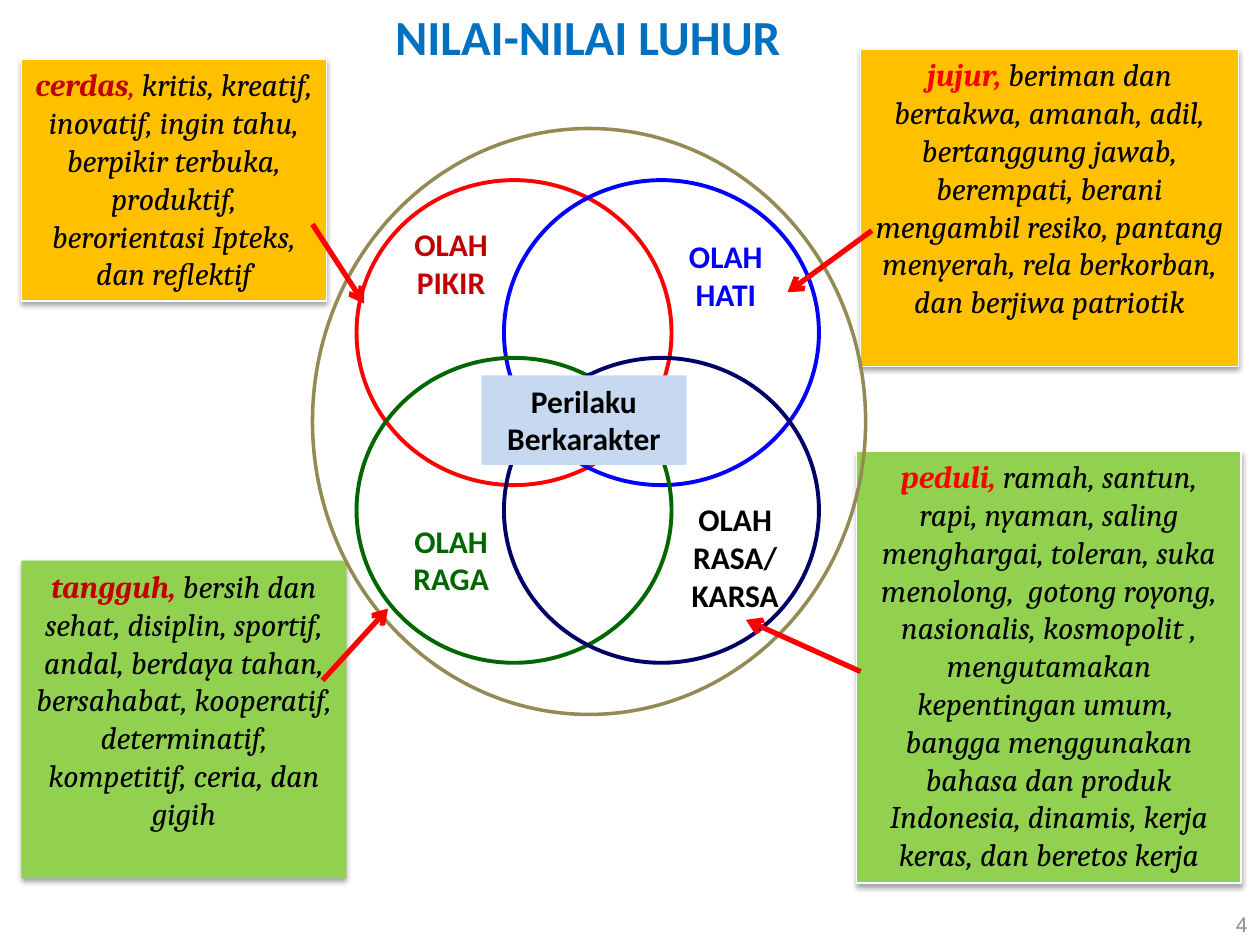
from dataclasses import dataclass

from lxml import etree
from pptx import Presentation
from pptx.dml.color import RGBColor
from pptx.enum.shapes import MSO_CONNECTOR, MSO_SHAPE
from pptx.enum.text import MSO_ANCHOR, PP_ALIGN
from pptx.oxml.ns import qn
from pptx.util import Inches, Pt

OVAL, RECTANGLE = MSO_SHAPE.OVAL, MSO_SHAPE.RECTANGLE
STRAIGHT = MSO_CONNECTOR.STRAIGHT
TOP, MIDDLE = MSO_ANCHOR.TOP, MSO_ANCHOR.MIDDLE
CENTER, RIGHT = PP_ALIGN.CENTER, PP_ALIGN.RIGHT


@dataclass(frozen=True)
class Theme:
    heading_font: str = "Calibri"
    value_font: str = "Cambria"
    number_font: str = "Arial"
    title_size: int = 28
    body_size: int = 18
    number_size: int = 12
    red: str = "FF0000"
    dark_red: str = "C00000"
    blue: str = "0000FF"
    navy: str = "000066"
    green: str = "006600"
    black: str = "000000"
    white: str = "FFFFFF"
    gray: str = "8C8C8C"
    title: str = "0070C0"
    amber: str = "FFC000"
    lime: str = "92D050"
    pale_blue: str = "C6D9F1"
    olive: str = "948A54"


THEME = Theme()

TITLE = ("NILAI-NILAI LUHUR", (3, 0, 3.33, 1.04))
PAGE_NUMBER = ("4", (7.67, 7.17, 2.33, 0.33))
CORE = ("Perilaku Berkarakter", (3.82, 2.98, 1.63, 0.71))
OUTER_CIRCLE = (2.48, 1.02, 4.39, 4.65)

CIRCLE_COLORS = [[THEME.red, THEME.blue], [THEME.green, THEME.navy]]
CIRCLE_ORIGIN, CIRCLE_STEP, CIRCLE_SIZE = (2.83, 1.43), (1.17, 1.41), (2.5, 2.42)

CIRCLE_LABELS = [
    ("OLAH HATI", (5.25, 1.83, 1.02, 0.71), THEME.blue),
    ("OLAH PIKIR", (3.07, 1.74, 1.02, 0.71), THEME.dark_red),
    ("OLAH RASA/\nKARSA", (5.25, 3.92, 1.17, 1.01), THEME.black),
    ("OLAH RAGA", (3.07, 4.09, 1.02, 0.71), THEME.green),
]

VALUE_BOXES = [
    dict(lead="jujur, ", lead_color=THEME.red, fill=THEME.amber, line=THEME.white,
         box=(6.83, 0.39, 3, 2.52),
         values="beriman dan bertakwa, amanah, adil, bertanggung jawab, berempati, "
                "berani mengambil resiko, pantang menyerah, rela berkorban, "
                "dan berjiwa patriotik"),
    dict(lead="peduli, ", lead_color=THEME.red, fill=THEME.lime, line=THEME.white,
         box=(6.8, 3.58, 3.05, 3.43),
         values="ramah, santun, rapi, nyaman, saling menghargai, toleran, "
                "suka menolong,  gotong royong, nasionalis, kosmopolit , "
                "mengutamakan kepentingan umum,  bangga menggunakan bahasa dan "
                "produk Indonesia, dinamis, kerja keras, dan beretos kerja"),
    dict(lead="tangguh, ", lead_color=THEME.dark_red, fill=THEME.lime, line=None,
         box=(0.17, 4.45, 2.58, 2.52),
         values="bersih dan sehat, disiplin, sportif, andal, berdaya tahan, "
                "bersahabat, kooperatif, determinatif, kompetitif, ceria, dan gigih"),
    dict(lead="cerdas", lead_color=THEME.dark_red, fill=THEME.amber, line=THEME.white,
         box=(0.17, 0.47, 2.42, 1.92), separator=",",
         values=" kritis, kreatif, inovatif, ingin tahu, berpikir terbuka, "
                "produktif, berorientasi Ipteks, dan reflektif"),
]

ARROWS = [
    ((6.83, 5.33), (5.92, 4.92)),
    ((2.56, 5.4), (3.08, 4.83)),
    ((2.48, 1.78), (2.89, 2.41)),
    ((6.92, 1.83), (6.25, 2.32)),
]


def add_run(paragraph, text, *, color, font=THEME.heading_font,
            size=THEME.body_size, bold=True, italic=False):
    run = paragraph.add_run()
    run.text = text
    run.font.name = font
    run.font.size = Pt(size)
    run.font.bold = bold
    run.font.italic = italic
    run.font.color.rgb = RGBColor.from_string(color)


def prepare_frame(shape, anchor=TOP):
    frame = shape.text_frame
    frame.word_wrap = True
    frame.vertical_anchor = anchor
    return frame


def write_text(shape, text, *, align=CENTER, anchor=TOP, **run_format):
    frame = prepare_frame(shape, anchor)
    for index, line in enumerate(text.split("\n")):
        paragraph = frame.add_paragraph() if index else frame.paragraphs[0]
        paragraph.alignment = align
        add_run(paragraph, line, **run_format)


def add_text(slide, text, box, **text_format):
    write_text(slide.shapes.add_textbox(*map(Inches, box)), text, **text_format)


def add_preset(slide, preset, box, fill=None, line=None, width=0.75):
    shape = slide.shapes.add_shape(preset, *map(Inches, box))
    shape.shadow.inherit = False
    if fill:
        shape.fill.solid()
        shape.fill.fore_color.rgb = RGBColor.from_string(fill)
    else:
        shape.fill.background()
    if line:
        shape.line.color.rgb = RGBColor.from_string(line)
        shape.line.width = Pt(width)
    else:
        shape.line.fill.background()
    return shape


def add_drop_shadow(shape):
    effects = shape.element.spPr.find(qn("a:effectLst"))
    shadow = etree.SubElement(effects, qn("a:outerShdw"), blurRad=str(Pt(3.1)),
                              dist=str(Pt(1.8)), dir="5400000", rotWithShape="0")
    color = etree.SubElement(shadow, qn("a:srgbClr"), val=THEME.black)
    etree.SubElement(color, qn("a:alpha"), val="35000")


def add_value_box(slide, lead, lead_color, values, box, fill, line, separator=""):
    shape = add_preset(slide, RECTANGLE, box, fill, line)
    add_drop_shadow(shape)
    paragraph = prepare_frame(shape).paragraphs[0]
    paragraph.alignment = CENTER
    runs = [(lead, lead_color, True), (separator, lead_color, False),
            (values, THEME.black, False)]
    for text, color, bold in runs:
        if text:
            add_run(paragraph, text, color=color, bold=bold, italic=True,
                    font=THEME.value_font)


def add_arrow(slide, start, end):
    arrow = slide.shapes.add_connector(STRAIGHT, *map(Inches, start + end))
    arrow.line.color.rgb = RGBColor.from_string(THEME.red)
    arrow.line.width = Pt(3)
    etree.SubElement(arrow.line._get_or_add_ln(), qn("a:tailEnd"), type="arrow")
    etree.SubElement(arrow.element.spPr, qn("a:effectLst"))


def main():
    """Build the slide of noble values around four overlapping circles."""
    presentation = Presentation()
    presentation.slide_width, presentation.slide_height = Inches(10), Inches(7.5)
    slide = presentation.slides.add_slide(presentation.slide_layouts[6])

    for row, colors in enumerate(CIRCLE_COLORS):
        for column, color in enumerate(colors):
            corner = (CIRCLE_ORIGIN[0] + column * CIRCLE_STEP[0],
                      CIRCLE_ORIGIN[1] + row * CIRCLE_STEP[1])
            add_preset(slide, OVAL, corner + CIRCLE_SIZE, line=color, width=2.25)
    for text, box, color in CIRCLE_LABELS:
        add_text(slide, text, box, color=color)
    for value_box in VALUE_BOXES:
        add_value_box(slide, **value_box)

    add_text(slide, *PAGE_NUMBER, align=RIGHT, anchor=MIDDLE, color=THEME.gray,
             font=THEME.number_font, size=THEME.number_size, bold=False)
    add_text(slide, *TITLE, color=THEME.title, size=THEME.title_size)
    core_text, core_box = CORE
    core = add_preset(slide, RECTANGLE, core_box, THEME.pale_blue)
    write_text(core, core_text, color=THEME.black)
    add_preset(slide, OVAL, OUTER_CIRCLE, line=THEME.olive, width=2)
    for start, end in ARROWS:
        add_arrow(slide, start, end)

    presentation.save("out.pptx")


if __name__ == "__main__":
    main()
